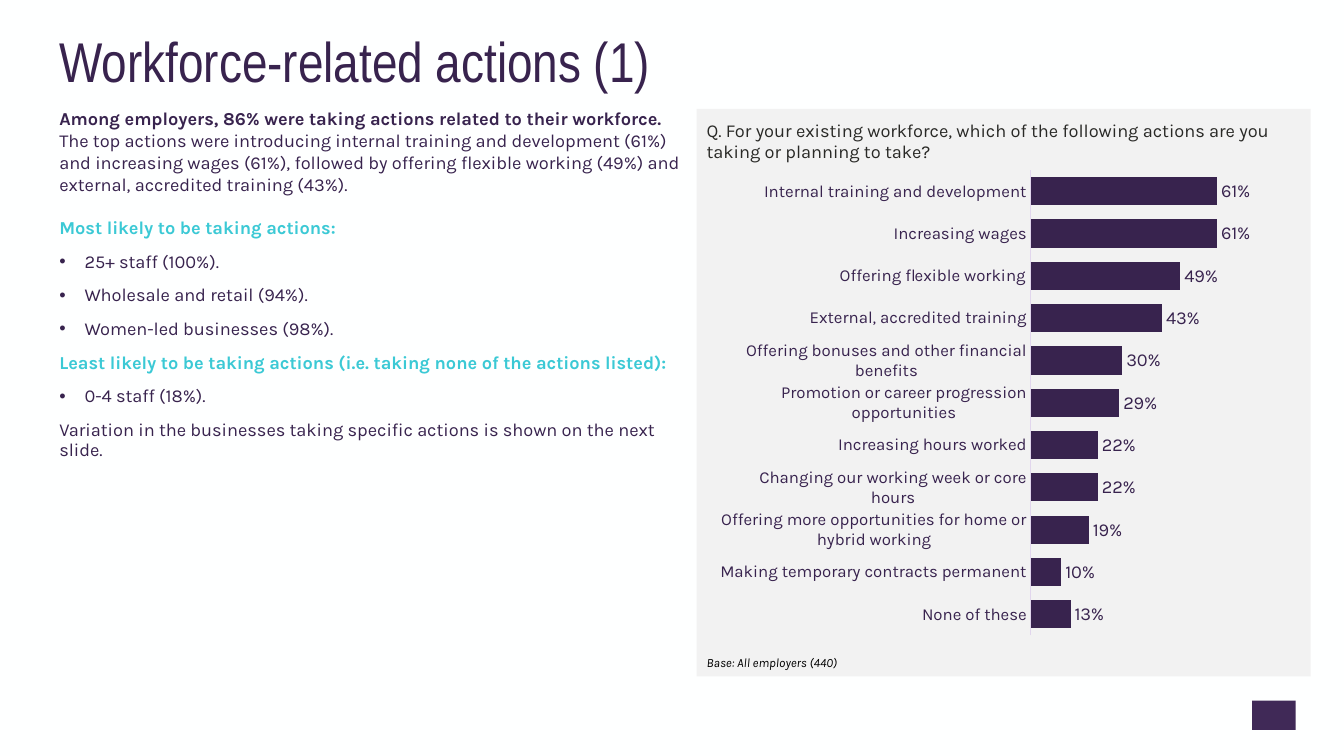
from lxml import etree
from pptx import Presentation
from pptx.chart.data import CategoryChartData
from pptx.dml.color import RGBColor
from pptx.enum.chart import XL_CHART_TYPE as ChartType, XL_LABEL_POSITION as LabelPos
from pptx.enum.chart import XL_TICK_MARK as TickMark
from pptx.enum.shapes import MSO_SHAPE as Shape
from pptx.enum.text import MSO_ANCHOR as Anchor
from pptx.oxml import parse_xml
from pptx.oxml.ns import nsdecls, qn
from pptx.util import Inches, Pt

COLOURS = {"background": "FEFFFF", "purple": "38234E", "badge": "402957", "panel": "F2F2F2",
           "teal": "3BC9D5", "question": "292926", "black": "000000", "axis": "E1D6ED"}


def style(font, colour, **formats):
    for name, value in {"name": "Karla", "size": Pt(13), **formats}.items():
        setattr(font, name, value)
    font.color.rgb = RGBColor.from_string(COLOURS[colour])


def add_text(box, text, colour, anchor=Anchor.TOP, **formats):
    frame = slide.shapes.add_textbox(*map(Inches, box)).text_frame
    frame.word_wrap = True
    frame.vertical_anchor = anchor
    if text:
        run = frame.paragraphs[0].add_run()
        run.text = text
        style(run.font, colour, **formats)
    return frame


prs = Presentation()
prs.slide_width, prs.slide_height = Inches(13.33), Inches(7.5)
slide = prs.slides.add_slide(prs.slide_layouts[6])
slide.background.fill.solid()
slide.background.fill.fore_color.rgb = RGBColor.from_string(COLOURS["background"])

# Page badge and chart panel
for colour, box in [("badge", (12.42, 6.95, 0.43, 0.29)), ("panel", (6.91, 1.08, 6.09, 5.63))]:
    block = slide.shapes.add_shape(Shape.RECTANGLE, *map(Inches, box))
    block.shadow.inherit = False
    block.fill.solid()
    block.fill.fore_color.rgb = RGBColor.from_string(COLOURS[colour])
    block.line.fill.background()

# Title, question and base
title = add_text((0.49, 0.25, 11.5, 0.77), "Workforce-related actions (1)", "purple",
                 Anchor.MIDDLE, name="Arial Narrow", size=Pt(40))
title.paragraphs[0].line_spacing = 0.9
add_text((6.91, 1.13, 5.78, 0.41), "Q. For your existing workforce, which of the following "
         "actions are you taking or planning to take?", "question")
add_text((6.91, 6.45, 4.68, 0.25), "Base: All employers (440)", "black",
         Anchor.MIDDLE, size=Pt(9), italic=True)

# Findings: kind of paragraph, text
findings = [
    ("heading", "Most likely to be taking actions:"),
    ("bullet", "25+ staff (100%)."),
    ("bullet", "Wholesale and retail (94%)."),
    ("bullet", "Women-led businesses (98%)."),
    ("heading", "Least likely to be taking actions (i.e. taking none of the actions listed):"),
    ("bullet", "0-4 staff (18%)."),
    ("plain", "Variation in the businesses taking specific actions is shown on the next slide."),
]
summary = add_text((0.49, 1.02, 6.36, 3.44),
                   "Among employers, 86% were taking actions related to their workforce. ",
                   "purple", bold=True)
top_actions = summary.paragraphs[0].add_run()
top_actions.text = ("The top actions were introducing internal training and development (61%) and "
                    "increasing wages (61%), followed by offering flexible working (49%) and "
                    "external, accredited training (43%).")
style(top_actions.font, "purple", bold=False)
for order, (kind, text) in enumerate(findings):
    finding = summary.add_paragraph()
    finding.space_before = Pt(10 if order else 15.2)
    finding.line_spacing = 0.9 if order else 1.0
    if kind == "bullet":
        props = finding._p.get_or_add_pPr()
        props.set("marL", str(Inches(0.25)))
        props.set("indent", str(Inches(-0.25)))
        etree.SubElement(props, qn("a:buFont"), typeface="Arial")
        etree.SubElement(props, qn("a:buChar"), char="•")
    run = finding.add_run()
    run.text = text
    style(run.font, "teal" if kind == "heading" else "purple", bold=kind == "heading")

# Bar chart of actions
actions = {
    "Internal training and development": 0.61,
    "Increasing wages": 0.61,
    "Offering flexible working": 0.49,
    "External, accredited training": 0.43,
    "Offering bonuses and other financial benefits": 0.3,
    "Promotion or career progression opportunities": 0.29,
    "Increasing hours worked": 0.22,
    "Changing our working week or core hours": 0.22,
    "Offering more opportunities for home or hybrid working": 0.19,
    "Making temporary contracts permanent": 0.1,
    "None of these": 0.13,
}
data = CategoryChartData(number_format="0%")
data.categories = list(actions)
data.add_series("Series 1", list(actions.values()))
chart = slide.shapes.add_chart(ChartType.BAR_CLUSTERED, *map(Inches, (7.1, 1.64, 5.58, 4.81)),
                               data).chart
chart.has_legend = chart.has_title = False
style(chart.font, "purple", name="Calibri")

plot = chart.plots[0]
plot.gap_width = 50
plot.vary_by_categories = False
bars = plot.series[0].format.fill
bars.solid()
bars.fore_color.rgb = RGBColor.from_string(COLOURS["purple"])
plot.has_data_labels = True
labels = plot.data_labels
for name, value in {"show_value": True, "position": LabelPos.OUTSIDE_END,
                    "number_format": "0%", "number_format_is_linked": False}.items():
    setattr(labels, name, value)
style(labels.font, "purple")

action_axis, share_axis = chart.category_axis, chart.value_axis
action_axis.reverse_order = True
action_axis.major_tick_mark = action_axis.minor_tick_mark = TickMark.NONE
action_axis.format.line.color.rgb = RGBColor.from_string(COLOURS["axis"])
action_axis.format.line.width = Pt(0.75)
style(action_axis.tick_labels.font, "purple", size=Pt(12))
for name, value in {"minimum_scale": 0, "maximum_scale": 0.7,
                    "has_major_gridlines": False, "visible": False}.items():
    setattr(share_axis, name, value)

# Fixed plot area, leaving room for the long category names
area = chart._chartSpace.chart.plotArea
for old in area.findall(qn("c:layout")):
    area.remove(old)
edges = "".join(f'<c:{key} val="{value}"/>' for key, value in [
    ("layoutTarget", "inner"), ("xMode", "edge"), ("yMode", "edge"),
    ("x", 0.56), ("y", 0.01), ("w", 0.38), ("h", 0.96)])
area.insert(0, parse_xml(f'<c:layout {nsdecls("c")}><c:manualLayout>{edges}'
                         '</c:manualLayout></c:layout>'))

prs.save("out.pptx")
